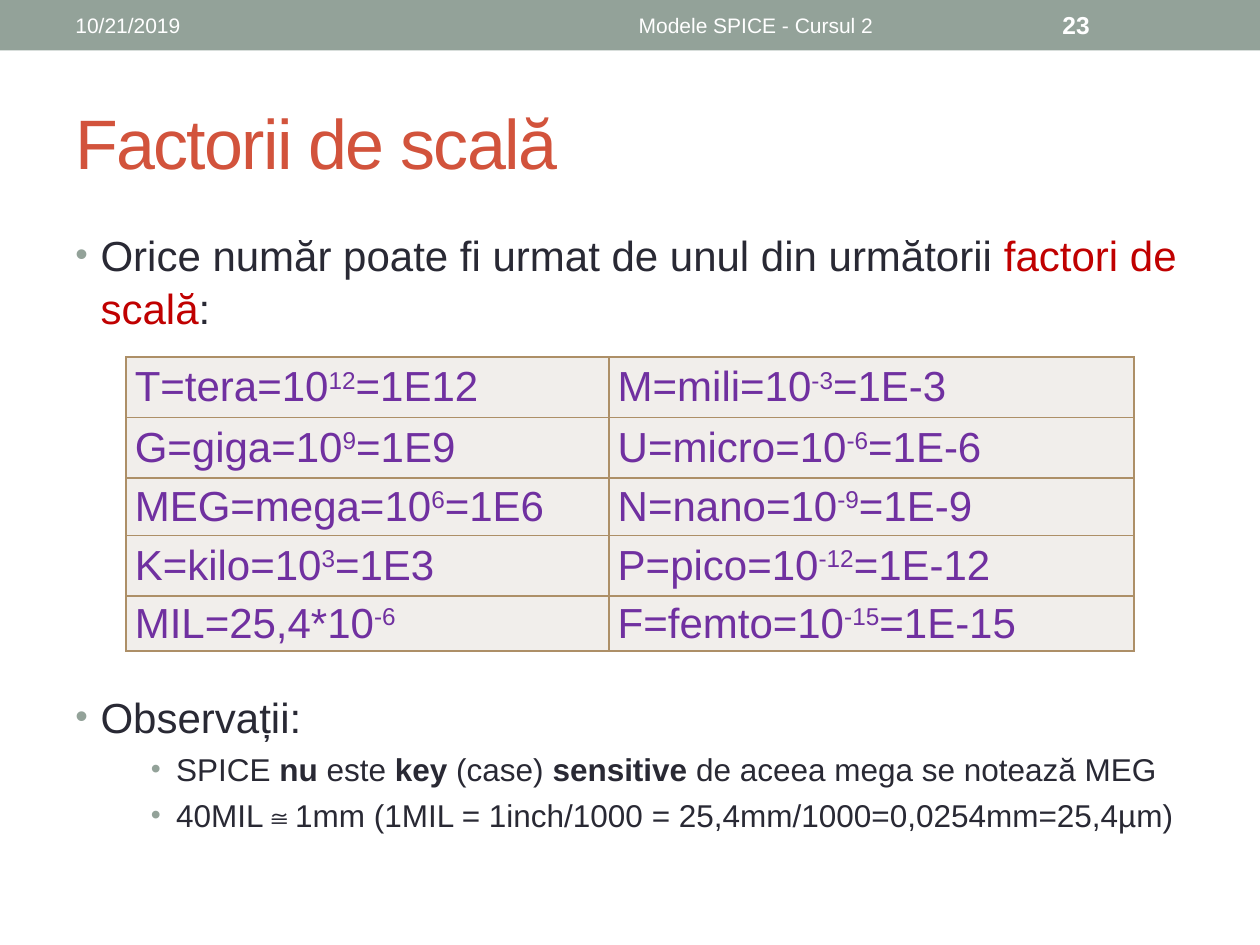
from lxml.etree import SubElement
from pptx import Presentation
from pptx.dml.color import RGBColor
from pptx.enum.shapes import MSO_SHAPE as Shape
from pptx.enum.text import MSO_ANCHOR as Anchor, MSO_AUTO_SIZE as AutoSize, PP_ALIGN as Align
from pptx.oxml.ns import qn
from pptx.util import Inches, Pt

SAGE, RUST, INK, RED = "93A299", "D2533C", "292934", "C00000"
PURPLE, TAN, CREAM, WHITE = "7030A0", "AD8F67", "F1EEEB", "FFFFFF"

FACTORS = [
    [("T=tera=10", "12", "=1E12"), ("M=mili=10", "-3", "=1E-3")],
    [("G=giga=10", "9", "=1E9"), ("U=micro=10", "-6", "=1E-6")],
    [("MEG=mega=10", "6", "=1E6"), ("N=nano=10", "-9", "=1E-9")],
    [("K=kilo=10", "3", "=1E3"), ("P=pico=10", "-12", "=1E-12")],
    [("MIL=25,4*10", "-6"), ("F=femto=10", "-15", "=1E-15")],
]


def color(text):
    return RGBColor.from_string(text)


def apply(target, values):
    for name, value in values.items():
        setattr(target, name, value)


class SlideBuilder:
    font = "Arial"
    columns, rows = 120, 90

    def __init__(self, deck):
        self.deck = deck
        self.slide = deck.slides.add_slide(deck.slide_layouts[5])

    def across(self, count):
        return round(self.deck.slide_width * count / self.columns)

    def down(self, count):
        return round(self.deck.slide_height * count / self.rows)

    def place(self, left, top, width, height):
        return self.across(left), self.down(top), self.across(width), self.down(height)

    def span(self, para, text, size, hue, bold=False):
        span = para.add_run()
        span.text = text
        apply(span.font, {"name": self.font, "size": Pt(size), "bold": bold})
        span.font.color.rgb = color(hue)
        return span

    def band(self, *area):
        band = self.slide.shapes.add_shape(Shape.RECTANGLE, *self.place(*area))
        band.shadow.inherit = False
        band.fill.solid()
        band.fill.fore_color.rgb = color(SAGE)
        band.line.fill.background()

    def title(self, text, *area):
        title = self.slide.shapes.title
        apply(title, dict(zip(("left", "top", "width", "height"), self.place(*area))))
        apply(title.text_frame, {"vertical_anchor": Anchor.MIDDLE, "word_wrap": True,
                                 "auto_size": AutoSize.NONE})
        para = title.text_frame.paragraphs[0]
        para.alignment = Align.LEFT
        span = self.span(para, text, 40, RUST)
        span.font._element.set("spc", "-100")

    def frame(self, area, anchor):
        box = self.slide.shapes.add_textbox(*self.place(*area))
        apply(box.text_frame, {"word_wrap": True, "vertical_anchor": anchor})
        return box.text_frame

    def label(self, text, *area, size=12, bold=False, align=Align.LEFT):
        para = self.frame(area, Anchor.MIDDLE).paragraphs[0]
        para.alignment = align
        self.span(para, text, size, WHITE, bold)

    def bullet(self, para, level, size):
        apply(para, {"level": level, "line_spacing": 1.05, "space_before": Pt(size * 0.2)})
        props = para._p.get_or_add_pPr()
        props.set("marL", str(Inches(0.8 if level else 0.2)))
        props.set("indent", str(Inches(-0.2)))
        SubElement(SubElement(props, qn("a:buClr")), qn("a:srgbClr"), val=SAGE)
        SubElement(props, qn("a:buSzPct"), val="90000" if level else "85000")
        SubElement(props, qn("a:buFont"), typeface=self.font)
        SubElement(props, qn("a:buChar"), char="•")

    def bullets(self, items, *area):
        frame = self.frame(area, Anchor.TOP)
        for index, (level, parts) in enumerate(items):
            para = frame.add_paragraph() if index else frame.paragraphs[0]
            size = 18 if level else 24
            self.bullet(para, level, size)
            for text, hue, bold in parts:
                self.span(para, text, size, hue, bold)

    def borders(self, cell):
        props = cell._tc.get_or_add_tcPr()
        for index, side in enumerate(("lnL", "lnR", "lnT", "lnB")):
            line = props.makeelement(qn("a:" + side), {"w": str(Pt(1))})
            SubElement(SubElement(line, qn("a:solidFill")), qn("a:srgbClr"), val=TAN)
            props.insert(index, line)

    def cell(self, cell, parts):
        apply(cell, {"vertical_anchor": Anchor.MIDDLE, "margin_left": Inches(0.07),
                     "margin_right": Inches(0.07), "margin_top": 0, "margin_bottom": 0})
        cell.fill.solid()
        cell.fill.fore_color.rgb = color(CREAM)
        self.borders(cell)
        para = cell.text_frame.paragraphs[0]
        para.alignment = Align.JUSTIFY
        for index, text in enumerate(parts):
            span = self.span(para, text, 24, PURPLE)
            if index == 1:
                span.font._element.set("baseline", "30000")

    def table(self, data, left, top, widths, heights):
        area = self.place(left, top, sum(widths), sum(heights))
        table = self.slide.shapes.add_table(len(heights), len(widths), *area).table
        apply(table, {"first_row": False, "horz_banding": False})
        for column, width in zip(table.columns, widths):
            column.width = self.across(width)
        for row, height, line in zip(table.rows, heights, data):
            row.height = self.down(height)
            for cell, parts in zip(row.cells, line):
                self.cell(cell, parts)


def main():
    deck = Presentation()
    apply(deck, {"slide_width": Inches(10), "slide_height": Inches(7.5)})
    page = SlideBuilder(deck)
    page.band(0, 0, 120, 4.8)
    page.label("10/21/2019", 6, 0.25, 38, 4.3)
    page.label("Modele SPICE - Cursul 2", 45, 0.25, 54, 4.3, align=Align.CENTER)
    page.label("23", 100, 0.25, 14, 4.3, size=14, bold=True)
    page.title("Factorii de scală", 6, 7, 108, 13)
    page.bullets([
        (0, [("Orice număr poate fi urmat de unul din următorii ", INK, False),
             ("factori de scală", RED, False), (":", INK, False)]),
    ], 6, 21, 108, 12)
    page.table(FACTORS, 12, 34, (46, 50), (5.75, 5.75, 5.5, 5.75, 5.25))
    page.bullets([
        (0, [("Observații:", INK, False)]),
        (2, [("SPICE ", INK, False), ("nu", INK, True), (" este ", INK, False),
             ("key", INK, True), (" (case) ", INK, False), ("sensitive", INK, True),
             (" de aceea mega se notează MEG", INK, False)]),
        (2, [("40MIL≅1mm (1MIL = 1inch/1000 = 25,4mm/1000=0,0254mm=25,4µm)", INK, False)]),
    ], 6, 65, 108, 17)
    deck.save("out.pptx")


if __name__ == "__main__":
    main()
